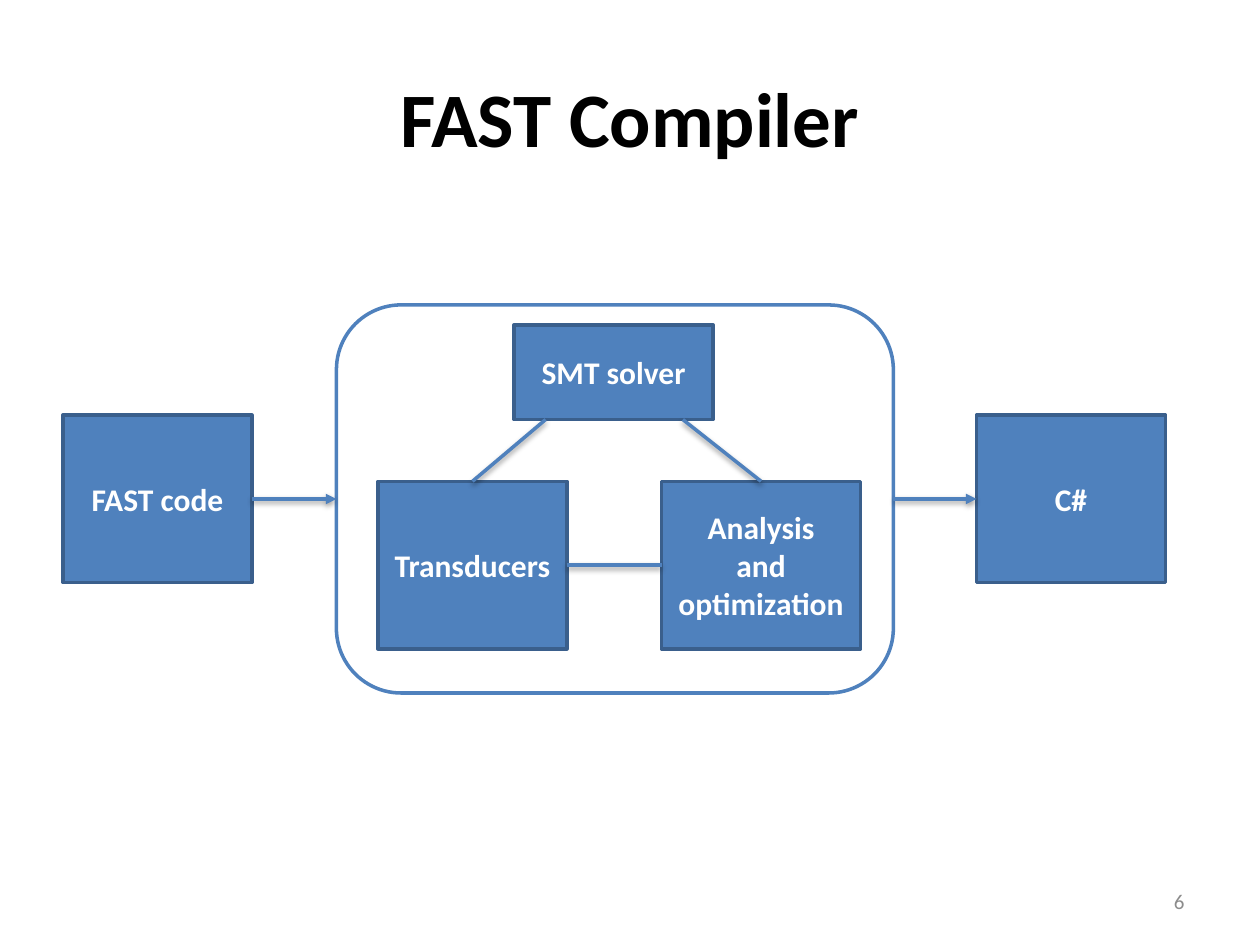
from lxml import etree
from pptx import Presentation
from pptx.dml.color import RGBColor
from pptx.enum.shapes import MSO_CONNECTOR, MSO_SHAPE
from pptx.enum.text import MSO_ANCHOR, PP_ALIGN
from pptx.oxml.ns import qn
from pptx.util import Inches, Pt

RECT, ROUNDED = MSO_SHAPE.RECTANGLE, MSO_SHAPE.ROUNDED_RECTANGLE
STRAIGHT = MSO_CONNECTOR.STRAIGHT
MIDDLE = MSO_ANCHOR.MIDDLE
CENTER, RIGHT = PP_ALIGN.CENTER, PP_ALIGN.RIGHT
SIDE_TOP, SIDE_LEFT, SIDE_RIGHT = 0, 1, 3

BLUE, DARK_BLUE = "4F81BD", "3A5F8C"
BLACK, WHITE, GRAY = "000000", "FFFFFF", "8C8C8C"


def rgb(color):
    return RGBColor.from_string(color)


def write(tf, text, size, color, align, bold=False):
    tf.word_wrap = True
    tf.vertical_anchor = MIDDLE
    tf.text = text
    for p in tf.paragraphs:
        p.alignment = align
        p.font.name = "Calibri"
        p.font.size = Pt(size)
        p.font.bold = bold
        p.font.color.rgb = rgb(color)


def place(sp, box):
    sp.left, sp.top, sp.width, sp.height = map(Inches, box)


def add_title(s, text, box):
    place(s.shapes.title, box)
    write(s.shapes.title.text_frame, text, 44, BLACK, CENTER, bold=True)


def add_page_number(s, text, box):
    sp = s.shapes.add_textbox(*map(Inches, box))
    write(sp.text_frame, text, 12, GRAY, RIGHT)


def add_outline(s, kind, box, color):
    sp = s.shapes.add_shape(kind, *map(Inches, box))
    sp.shadow.inherit = False
    sp.line.color.rgb = rgb(color)
    sp.line.width = Pt(2)
    return sp


def add_block(s, text, box):
    sp = add_outline(s, RECT, box, DARK_BLUE)
    sp.fill.solid()
    sp.fill.fore_color.rgb = rgb(BLUE)
    write(sp.text_frame, text, 18, WHITE, CENTER, bold=True)
    return sp


def add_link(s, start=(0, 0), end=(0, 0)):
    """Line that keeps the soft shadow of the theme."""
    line = s.shapes.add_connector(STRAIGHT, *map(Inches, (*start, *end)))
    line.line.color.rgb = rgb(BLUE)
    line.line.width = Pt(2)
    return line


def join(s, source, target, arrow=False):
    """Link the right side of source to the left side of target."""
    link = add_link(s)
    link.begin_connect(source, SIDE_RIGHT)
    link.end_connect(target, SIDE_LEFT)
    if arrow:
        etree.SubElement(link.line._get_or_add_ln(), qn("a:tailEnd"), type="triangle")


def add_compiler(s, box):
    """Rounded frame with the solver above the two linked stages."""
    left, top, _, _ = box
    frame = add_outline(s, ROUNDED, box, BLUE)
    frame.fill.background()

    stage_top = top + 1.4
    solver_bottom = top + 0.91
    transducers = add_block(s, "Transducers", (left + 0.33, stage_top, 1.5, 1.33))
    analysis = add_block(s, "Analysis\nand\noptimization",
                         (left + 2.58, stage_top, 1.58, 1.33))
    add_block(s, "SMT solver", (left + 1.41, top + 0.16, 1.58, 0.75))

    join(s, transducers, analysis)
    for stage, start_x in ((transducers, left + 1.66), (analysis, left + 2.75)):
        link = add_link(s, (start_x, solver_bottom), (start_x, stage_top))
        link.end_connect(stage, SIDE_TOP)
    return frame


def add_pipeline(s, box):
    """Source code, compiler and output code, from left to right."""
    left, top, width, height = box
    block_w, block_h = 1.5, 1.33
    block_top = top + (height - block_h) / 2
    source = add_block(s, "FAST code", (left, block_top, block_w, block_h))
    output = add_block(s, "C#", (left + width - block_w, block_top, block_w, block_h))
    compiler = add_compiler(s, (left + 2.17, top, 4.42, height))
    join(s, source, compiler, arrow=True)
    join(s, compiler, output, arrow=True)


def main():
    prs = Presentation()
    prs.slide_width, prs.slide_height = Inches(10), Inches(7.5)
    s = prs.slides.add_slide(prs.slide_layouts.get_by_name("Title Only"))
    add_title(s, "FAST Compiler", (0.5, 0.3, 9, 1.25))
    add_pipeline(s, (0.5, 2.42, 8.75, 3.08))
    add_page_number(s, "6", (7.17, 6.95, 2.33, 0.4))
    prs.save("out.pptx")


if __name__ == "__main__":
    main()
